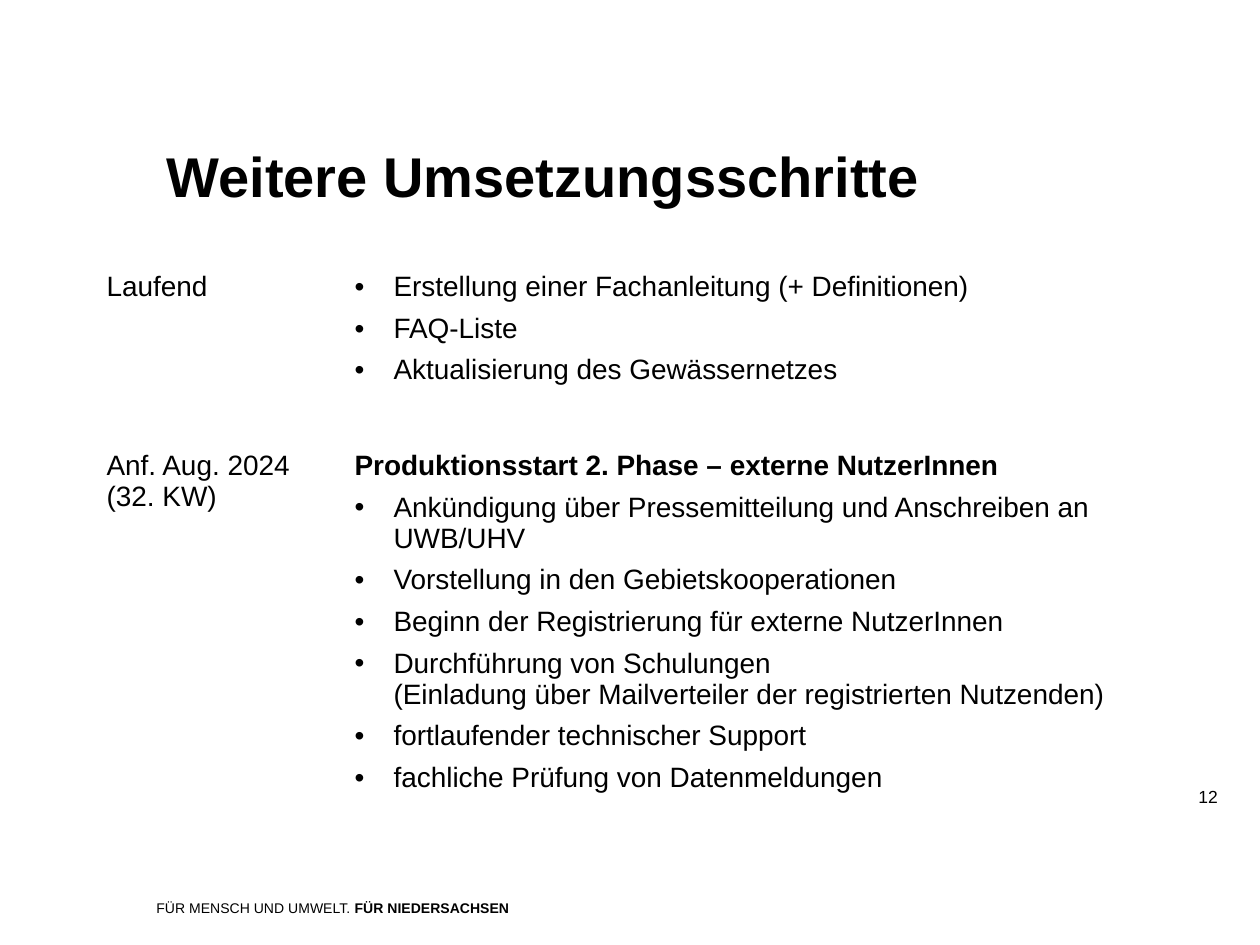
from lxml import etree
from pptx import Presentation
from pptx.dml.color import RGBColor
from pptx.enum.text import MSO_ANCHOR, PP_ALIGN
from pptx.oxml.ns import qn
from pptx.util import Emu, Pt

LEFT = PP_ALIGN.LEFT
TOP = MSO_ANCHOR.TOP
MIDDLE = MSO_ANCHOR.MIDDLE
TITLE_ONLY = 5
PX_PER_INCH = 126
BULLET_INDENT = 39


def px(length):
    return Emu(round(length * 914400 / PX_PER_INCH))


def colour(hex_text):
    return RGBColor.from_string(hex_text)


def write(paragraph, text, size=16, bold=False, font="Arial", ink="000000",
          space_after=0, bullet=False):
    """Append text to a paragraph; a newline becomes a line break."""
    if bullet:
        properties = paragraph._p.get_or_add_pPr()
        properties.set("marL", str(px(BULLET_INDENT)))
        properties.set("indent", str(-px(BULLET_INDENT)))
        etree.SubElement(properties, qn("a:buFont")).set("typeface", font)
        etree.SubElement(properties, qn("a:buChar")).set("char", "•")
    paragraph.alignment = LEFT
    paragraph.space_after = Pt(space_after)
    for index, line in enumerate(text.split("\n")):
        if index:
            paragraph.add_line_break()
        run = paragraph.add_run()
        run.text = line
        run.font.name = font
        run.font.size = Pt(size)
        run.font.bold = bold
        run.font.color.rgb = colour(ink)


class SlideBuilder:
    """Holds the current slide and its text style."""

    def __init__(self, slide, font="Arial", ink="000000"):
        self.slide = slide
        self.style = {"font": font, "ink": ink}

    def title(self, text, left, top, width, height):
        title = self.slide.shapes.title
        title.left, title.top = px(left), px(top)
        title.width, title.height = px(width), px(height)
        title.text_frame.vertical_anchor = MIDDLE
        write(title.text_frame.paragraphs[0], text, size=32, bold=True,
              space_after=6, **self.style)

    def label(self, parts, left, top, width, height, size):
        """Add one line of text made of (text, bold) parts."""
        box = self.slide.shapes.add_textbox(
            px(left), px(top), px(width), px(height))
        box.text_frame.word_wrap = True
        for text, bold in parts:
            write(box.text_frame.paragraphs[0], text, size=size, bold=bold,
                  **self.style)

    def schedule(self, phases, left, top, column_widths, row_heights):
        """Add a table of (date, heading, steps) phases."""
        table = self.slide.shapes.add_table(
            len(phases), len(column_widths), px(left), px(top),
            px(sum(column_widths)), px(sum(row_heights))).table
        table.first_row = False
        table.horz_banding = False
        for column, width in zip(table.columns, column_widths):
            column.width = px(width)
        for row, height, (date, heading, steps) in zip(
                table.rows, row_heights, phases):
            row.height = px(height)
            date_cell, steps_cell = row.cells
            for cell in row.cells:
                cell.fill.background()
                cell.vertical_anchor = TOP
            write(date_cell.text_frame.paragraphs[0], date, **self.style)
            entries = [(heading, True)] if heading else []
            entries += [(step, False) for step in steps]
            frame = steps_cell.text_frame
            for index, (text, is_heading) in enumerate(entries):
                paragraph = frame.add_paragraph() if index else frame.paragraphs[0]
                write(paragraph, text, bold=is_heading, bullet=not is_heading,
                      space_after=6, **self.style)


PHASES = [
    ("Laufend", None, [
        "Erstellung einer Fachanleitung (+ Definitionen)",
        "FAQ-Liste",
        "Aktualisierung des Gewässernetzes",
    ]),
    ("Anf. Aug. 2024 (32. KW)", "Produktionsstart 2. Phase – externe NutzerInnen", [
        "Ankündigung über Pressemitteilung und Anschreiben an UWB/UHV",
        "Vorstellung in den Gebietskooperationen",
        "Beginn der Registrierung für externe NutzerInnen",
        "Durchführung von Schulungen\n"
        "(Einladung über Mailverteiler der registrierten Nutzenden)",
        "fortlaufender technischer Support",
        "fachliche Prüfung von Datenmeldungen",
    ]),
]


def main():
    presentation = Presentation()
    presentation.slide_width = px(1260)
    presentation.slide_height = px(945)
    layout = presentation.slide_layouts[TITLE_ONLY]
    builder = SlideBuilder(presentation.slides.add_slide(layout))

    builder.label([("FÜR MENSCH UND UMWELT. ", False), ("FÜR NIEDERSACHSEN", True)],
                  144, 893, 774, 30, size=8)
    builder.label([("12", False)], 1186, 780, 69, 34, size=10)
    builder.title("Weitere Umsetzungsschritte", 154, 135, 1071, 81)
    builder.schedule(PHASES, 94, 265, column_widths=[248, 794],
                     row_heights=[179, 378])
    presentation.save("out.pptx")


if __name__ == "__main__":
    main()
